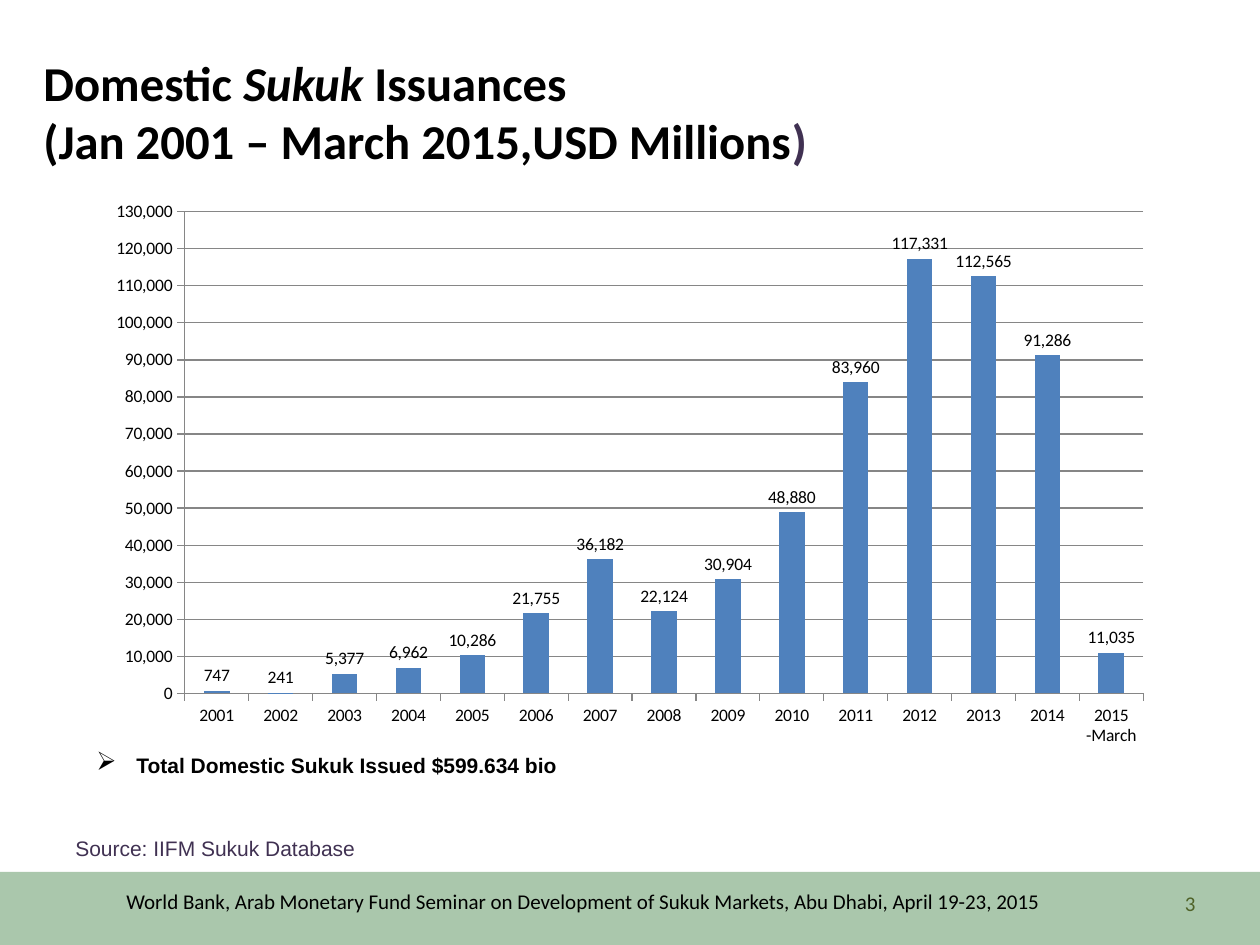
"""Build the slide on domestic Sukuk issuances."""
from dataclasses import dataclass

from lxml import etree
from pptx import Presentation
from pptx import util as u
from pptx.chart.data import CategoryChartData
from pptx.dml.color import RGBColor
from pptx.enum import chart as ch, shapes, text
from pptx.oxml import ns, parse_xml


@dataclass
class Theme:
    ink: str = "000000"
    plum: str = "403152"
    olive: str = "4F6228"
    band: str = "72A376"
    bar: str = "4F81BD"
    grid: str = "868686"
    head: float = 27.8
    body: float = 12
    tick: float = 10
    sans: str = "Calibri"
    alt: str = "Arial"


look = Theme()
px = 914400 / 126


def box(*place):
    return [u.Emu(round(n * px)) for n in place]


def write(place, runs, size, face, align="LEFT", anchor="TOP", wrap=True):
    frame = slide.shapes.add_textbox(*box(*place)).text_frame
    frame.word_wrap = wrap
    frame.vertical_anchor = text.MSO_ANCHOR[anchor]
    para = frame.paragraphs[0]
    para.alignment = text.PP_ALIGN[align]
    for words, hue, bold, slant in runs:
        if words == "\n":
            para.add_line_break()
            continue
        run = para.add_run()
        run.text = words
        font = run.font
        font.name, font.size = face, u.Pt(size)
        font.bold, font.italic = bold, slant
        font.color.rgb = RGBColor.from_string(hue)
    return para


deck = Presentation()
deck.slide_width, deck.slide_height = box(1260, 945)
slide = deck.slides.add_slide(deck.slide_layouts[6])

band = slide.shapes.add_shape(shapes.MSO_SHAPE.RECTANGLE, *box(0, 872, 1260, 73))
band.shadow.inherit = False
band.line.fill.background()
band.fill.solid()
band.fill.fore_color.rgb = RGBColor.from_string(look.band)
hue = band.fill._xPr.find(".//" + ns.qn("a:srgbClr"))
etree.SubElement(hue, ns.qn("a:alpha"), val="60000")

write((1061, 882, 147, 42), [("3", look.olive, False, False)],
      look.body, look.sans, "RIGHT", "MIDDLE")
write((31, 42, 851, 138), [
    ("Domestic ", look.ink, True, False),
    ("Sukuk", look.ink, True, True),
    (" Issuances", look.ink, True, False),
    ("\n", look.ink, True, False),
    ("(Jan 2001 – March 2015,USD Millions", look.ink, True, False),
    (")", look.plum, True, False),
], look.head, look.sans, anchor="MIDDLE")
write((63, 829, 431, 38), [("Source: IIFM Sukuk Database", look.plum, False, False)],
      look.body, look.alt)

data = CategoryChartData(number_format="#,##0")
data.categories = [str(year) for year in range(2001, 2015)] + ["2015 -March"]
data.add_series("Series 1", [747, 241, 5377, 6962, 10286, 21755, 36182, 22124,
                             30904, 48880, 83960, 117331, 112565, 91286, 11035])
chart = slide.shapes.add_chart(ch.XL_CHART_TYPE.COLUMN_CLUSTERED,
                               *box(89, 189, 1065, 567), data).chart
chart.has_legend = chart.has_title = False
chart.font.name, chart.font.size = look.sans, u.Pt(look.tick)
chart.font.color.rgb = RGBColor.from_string(look.ink)

plot = chart.plots[0]
plot.vary_by_categories = False
plot.gap_width = 150
fill = plot.series[0].format.fill
fill.solid()
fill.fore_color.rgb = RGBColor.from_string(look.bar)
plot.has_data_labels = True
tags = plot.data_labels
tags.show_value = True
tags.number_format, tags.number_format_is_linked = "#,##0", False
tags.position = ch.XL_LABEL_POSITION.OUTSIDE_END

axis = chart.value_axis
axis.minimum_scale, axis.maximum_scale, axis.major_unit = 0, 130000, 10000
axis.has_major_gridlines = True
axis.tick_labels.number_format = "#,##0"
axis.tick_labels.number_format_is_linked = False
for side in (axis, chart.category_axis):
    side.major_tick_mark = ch.XL_TICK_MARK.OUTSIDE
for rule in (axis, chart.category_axis, axis.major_gridlines):
    rule.format.line.color.rgb = RGBColor.from_string(look.grid)
    rule.format.line.width = u.Pt(0.75)

area = chart.element.find(".//" + ns.qn("c:plotArea"))
for old in area.findall(ns.qn("c:layout")):
    area.remove(old)
sizes = {"x": 0.09, "y": 0.04, "w": 0.9, "h": 0.85}
area.insert(0, parse_xml(
    f'<c:layout {ns.nsdecls("c")}><c:manualLayout><c:layoutTarget val="inner"/>'
    '<c:xMode val="edge"/><c:yMode val="edge"/>'
    + "".join(f'<c:{key} val="{val}"/>' for key, val in sizes.items())
    + "</c:manualLayout></c:layout>"))

total = write((84, 746, 512, 38),
              [("Total Domestic Sukuk Issued $599.634 bio", look.ink, True, False)],
              look.body, look.alt, wrap=False)
props = total._p.get_or_add_pPr()
indent = round(40 * px)
props.set("marL", str(indent))
props.set("indent", str(-indent))
etree.SubElement(props, ns.qn("a:buSzPct"), val="123000")
etree.SubElement(props, ns.qn("a:buChar"), char="➢")

write((53, 882, 1061, 42), [
    ("World Bank, Arab Monetary Fund Seminar on Development of Sukuk Markets, "
     "Abu Dhabi, April 19-23, 2015", look.ink, False, False),
], look.body, look.sans, "CENTER")

deck.save("out.pptx")
